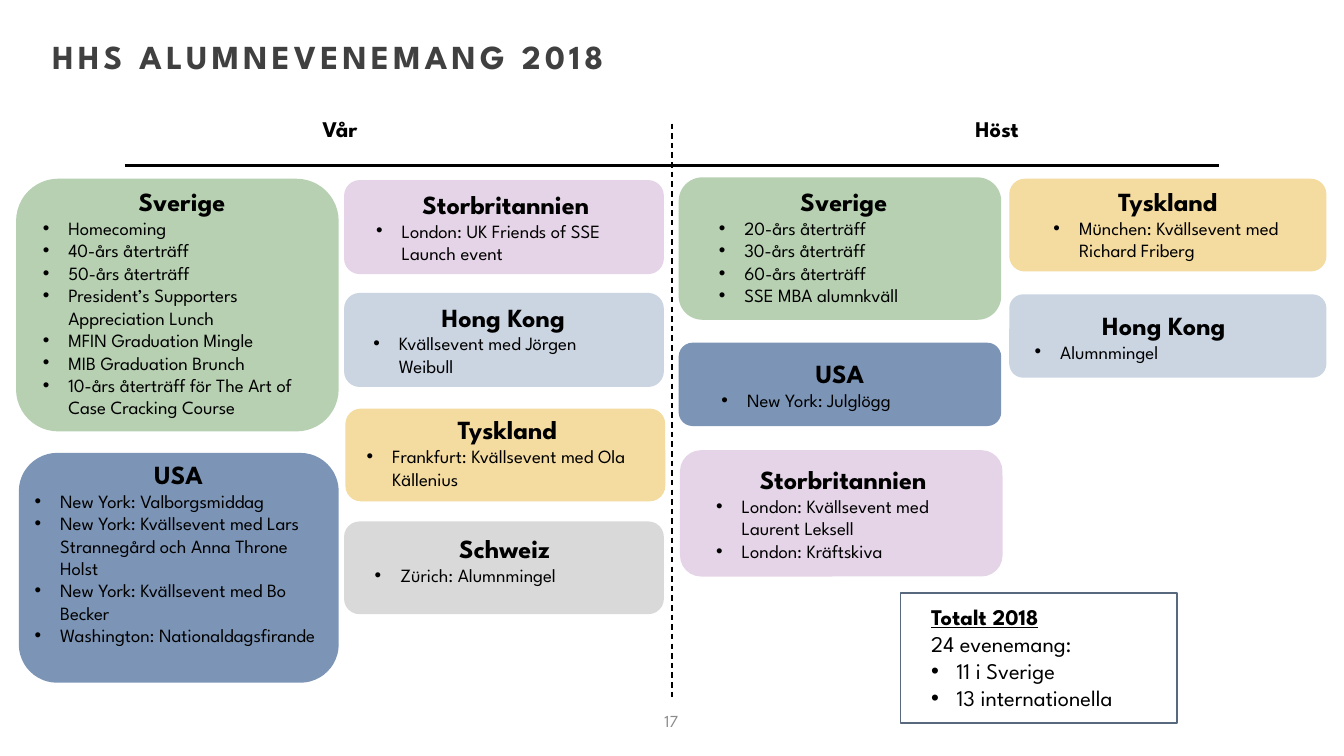
from dataclasses import dataclass

from lxml.etree import SubElement
from pptx import Presentation
from pptx.dml.color import RGBColor
from pptx.enum.dml import MSO_LINE_DASH_STYLE as Dash
from pptx.enum.shapes import MSO_CONNECTOR as Connector, MSO_SHAPE as Shape
from pptx.enum.text import MSO_ANCHOR as Anchor, MSO_AUTO_SIZE as AutoSize, PP_ALIGN as Align
from pptx.oxml.ns import qn
from pptx.util import Inches, Pt

Box = tuple[float, float, float, float]


@dataclass(frozen=True)
class Theme:
    font: str = "League Spartan"
    title_size: float = 18
    heading_size: float = 14
    label_size: float = 12
    event_size: float = 10
    number_size: float = 9
    ink: str = "000000"
    title: str = "404040"
    number: str = "8C8C8C"
    white: str = "FFFFFF"
    frame: str = "58697E"
    indent: float = 0.19


@dataclass(frozen=True)
class Card:
    country: str
    events: tuple[str, ...]
    box: Box
    text_box: Box


THEME = Theme()

COUNTRY_FILLS = {
    "Sverige": "B6D0B1",
    "USA": "7C95B6",
    "Storbritannien": "E5D4E7",
    "Hong Kong": "CBD5E2",
    "Tyskland": "F4DBA0",
    "Schweiz": "D9D9D9",
}

SPRING = (
    Card("Sverige",
         ("Homecoming", "40-års återträff", "50-års återträff",
          "President’s Supporters Appreciation Lunch", "MFIN Graduation Mingle",
          "MIB Graduation Brunch", "10-års återträff för The Art of Case Cracking Course"),
         (0.12, 1.33, 2.4, 1.88), (0.22, 1.33, 2.27, 2.02)),
    Card("USA",
         ("New York: Valborgsmiddag",
          "New York: Kvällsevent med Lars Strannegård och Anna Throne Holst",
          "New York: Kvällsevent med Bo Becker", "Washington: Nationaldagsfirande"),
         (0.14, 3.37, 2.38, 1.71), (0.16, 3.36, 2.34, 1.68)),
    Card("Storbritannien", ("London: UK Friends of SSE Launch event",),
         (2.56, 1.34, 2.38, 0.7), (2.7, 1.35, 2.13, 0.67)),
    Card("Hong Kong", ("Kvällsevent med Jörgen Weibull",),
         (2.56, 2.18, 2.38, 0.7), (2.68, 2.19, 2.13, 0.67)),
    Card("Tyskland", ("Frankfurt: Kvällsevent med Ola Källenius",),
         (2.57, 3.04, 2.38, 0.69), (2.63, 3.03, 2.29, 0.67)),
    Card("Schweiz", ("Zürich: Alumnmingel",),
         (2.56, 3.88, 2.38, 0.69), (2.69, 3.91, 2.13, 0.5)),
)

AUTUMN = (
    Card("Sverige",
         ("20-års återträff", "30-års återträff", "60-års återträff", "SSE MBA alumnkväll"),
         (5.05, 1.32, 2.4, 1.06), (5.25, 1.33, 2.06, 1.01)),
    Card("USA", ("New York: Julglögg",),
         (5.05, 2.55, 2.4, 0.62), (5.27, 2.61, 1.96, 0.5)),
    Card("Storbritannien",
         ("London: Kvällsevent med Laurent Leksell", "London: Kräftskiva"),
         (5.06, 3.35, 2.4, 0.94), (5.23, 3.4, 2.09, 0.84)),
    Card("Tyskland", ("München: Kvällsevent med Richard Friberg",),
         (7.51, 1.33, 2.36, 0.69), (7.74, 1.33, 1.9, 0.67)),
    Card("Hong Kong", ("Alumnmingel",),
         (7.51, 2.19, 2.36, 0.62), (7.6, 2.25, 2.12, 0.5)),
)


def place(box: Box) -> list[Inches]:
    return [Inches(length) for length in box]


def add_run(paragraph, text: str, size: float, color: str = THEME.ink,
            bold: bool = False, underline: bool = False):
    run = paragraph.add_run()
    run.text = text
    run.font.name = THEME.font
    run.font.size = Pt(size)
    run.font.bold = bold
    run.font.color.rgb = RGBColor.from_string(color)
    if underline:
        run.font.underline = True
    return run


def add_bullet(frame, text: str, size: float) -> None:
    paragraph = frame.add_paragraph()
    properties = paragraph._p.get_or_add_pPr()
    indent = Inches(THEME.indent)
    properties.set("marL", str(indent))
    properties.set("indent", str(-indent))
    SubElement(properties, qn("a:buFont")).set("typeface", "Arial")
    SubElement(properties, qn("a:buChar")).set("char", "•")
    add_run(paragraph, text, size)


def add_text_frame(slide, box: Box, wrap: bool = True):
    frame = slide.shapes.add_textbox(*place(box)).text_frame
    frame.word_wrap = wrap
    return frame


def clear_margins(frame) -> None:
    frame.margin_left = frame.margin_right = frame.margin_top = frame.margin_bottom = 0


def add_panel(slide, kind: Shape, box: Box, fill: str, outline: str | None = None) -> None:
    panel = slide.shapes.add_shape(kind, *place(box))
    panel.shadow.inherit = False
    panel.fill.solid()
    panel.fill.fore_color.rgb = RGBColor.from_string(fill)
    if outline:
        panel.line.color.rgb = RGBColor.from_string(outline)
        panel.line.width = Pt(1)
    else:
        panel.line.fill.background()


def add_line(slide, ends: Box, width: float, dash: Dash | None = None) -> None:
    line = slide.shapes.add_connector(Connector.STRAIGHT, *place(ends))
    line.line.color.rgb = RGBColor.from_string(THEME.ink)
    line.line.width = Pt(width)
    if dash:
        line.line.dash_style = dash
    SubElement(line._element.spPr, qn("a:effectLst"))


def add_card(slide, card: Card) -> None:
    add_panel(slide, Shape.ROUNDED_RECTANGLE, card.box, COUNTRY_FILLS[card.country])
    frame = add_text_frame(slide, card.text_box)
    heading = frame.paragraphs[0]
    heading.alignment = Align.CENTER
    add_run(heading, card.country, THEME.heading_size, bold=True)
    for event in card.events:
        add_bullet(frame, event, THEME.event_size)


def add_title(slide, text: str) -> None:
    title = slide.shapes.title
    title.left, title.top, title.width, title.height = place((0.39, 0.3, 9.22, 0.58))
    frame = title.text_frame
    frame.auto_size = AutoSize.NONE
    frame.vertical_anchor = Anchor.TOP
    clear_margins(frame)
    paragraph = frame.paragraphs[0]
    paragraph.alignment = Align.LEFT
    paragraph.line_spacing = 0.9
    run = add_run(paragraph, text, THEME.title_size, THEME.title, bold=True)
    run._r.get_or_add_rPr().set("spc", "225")


def add_total(slide) -> None:
    add_panel(slide, Shape.RECTANGLE, (6.7, 4.41, 2.06, 0.97), THEME.white, THEME.frame)
    frame = add_text_frame(slide, (6.83, 4.44, 2.18, 0.91))
    add_run(frame.paragraphs[0], "Totalt 2018", THEME.label_size, bold=True, underline=True)
    add_run(frame.add_paragraph(), "24 evenemang:", THEME.label_size)
    for count in ("11 i Sverige", "13 internationella"):
        add_bullet(frame, count, THEME.label_size)


def add_slide_number(slide, number: str) -> None:
    frame = add_text_frame(slide, (4.7, 5.21, 0.59, 0.3))
    clear_margins(frame)
    frame.vertical_anchor = Anchor.MIDDLE
    frame.paragraphs[0].alignment = Align.CENTER
    add_run(frame.paragraphs[0], number, THEME.number_size, THEME.number)


def main() -> None:
    # Widescreen 16:9 slide
    deck = Presentation()
    deck.slide_width = Inches(10)
    deck.slide_height = deck.slide_width * 9 // 16
    slide = deck.slides.add_slide(deck.slide_layouts[5])
    add_title(slide, "HHS ALUMNEVENEMANG 2018")

    # Season labels and dividers
    for season, box in (("Vår", (2.3, 0.81, 0.53, 0.3)), ("Höst", (7.16, 0.81, 0.6, 0.3))):
        label = add_text_frame(slide, box, wrap=False)
        add_run(label.paragraphs[0], season, THEME.label_size, bold=True)
    add_line(slide, (0.93, 1.23, 9.07, 1.23), 1.5)
    add_line(slide, (5, 0.92, 5, 5.21), 0.75, Dash.DASH)

    # Events by country
    for card in SPRING + AUTUMN:
        add_card(slide, card)

    # Summary and slide number
    add_total(slide)
    add_slide_number(slide, "17")
    deck.save("out.pptx")


if __name__ == "__main__":
    main()
